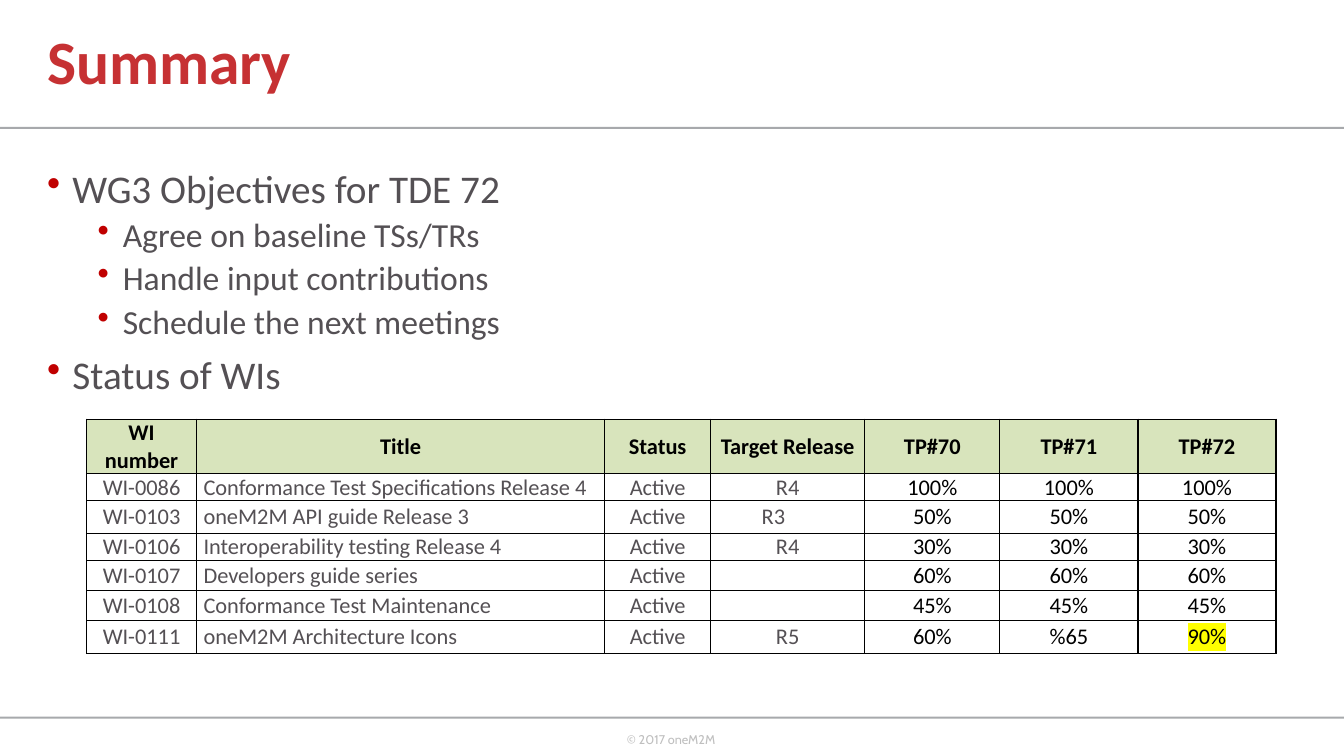
from pptx import Presentation, util as u
from pptx.dml.color import RGBColor
from pptx.enum import shapes, text
from pptx.oxml import parse_xml
from pptx.oxml.ns import nsdecls, qn

RED = RGBColor(0xC6, 0x31, 0x33)
BULLET_RED = RGBColor(0xC0, 0x00, 0x00)
GREY = RGBColor(0x54, 0x50, 0x54)
RULE_GREY = RGBColor(0xA7, 0xA9, 0xAC)
FOOTER_GREY = RGBColor(0xBF, 0xBF, 0xBF)
BLACK = RGBColor(0x00, 0x00, 0x00)
WHITE = RGBColor(0xFF, 0xFF, 0xFF)
HEADER_GREEN = RGBColor(0xD8, 0xE4, 0xBC)
YELLOW = RGBColor(0xFF, 0xFF, 0x00)

# The page is a grid of 160 columns by 90 rows of square units
UNIT = u.Inches(1) // 12
PAGE_COLUMNS, PAGE_ROWS = 160, 90

OBJECTIVES = [
    (0, "WG3 Objectives for TDE 72"),
    (1, "Agree on baseline TSs/TRs"),
    (1, "Handle input contributions"),
    (1, "Schedule the next meetings"),
    (0, "Status of WIs"),
]
# Per level: text size, left indent in grid units, space before
LEVELS = [(28, 3, 10), (24, 9, 5)]

HEADINGS = ["WI number", "Title", "Status", "Target Release", "TP#70", "TP#71", "TP#72"]
WORK_ITEMS = [
    ["WI-0086", "Conformance Test Specifications Release 4", "Active", "R4", "100%", "100%", "100%"],
    ["WI-0103", "oneM2M API guide Release 3", "Active", "R3", "50%", "50%", "50%"],
    ["WI-0106", "Interoperability testing Release 4", "Active", "R4", "30%", "30%", "30%"],
    ["WI-0107", "Developers guide series", "Active", "", "60%", "60%", "60%"],
    ["WI-0108", "Conformance Test Maintenance", "Active", "", "45%", "45%", "45%"],
    ["WI-0111", "oneM2M Architecture Icons", "Active", "R5", "60%", "%65", "90%"],
]
COLUMN_UNITS = [13.08, 48.6, 12.6, 18.36, 16.08, 16.44, 16.44]
ROW_UNITS = [6.48, 3.24, 3.84, 3.24, 3.24, 3.24, 3.84]
TITLE_COLUMN, RELEASE_COLUMN, FIRST_PROGRESS_COLUMN = 1, 3, 4
SHIFTED_RELEASE = (2, RELEASE_COLUMN)
HIGHLIGHTED = (6, 6)


def grid(*units):
    return [round(n * UNIT) for n in units]


def apply(target, values):
    for name, value in values.items():
        setattr(target, name, value)


def add_span(para, words, color, **values):
    span = para.add_run()
    span.text = words
    apply(span.font, {"name": "Calibri", **values})
    span.font.color.rgb = color
    return span


def add_text_box(page, box, **values):
    frame = page.shapes.add_textbox(*grid(*box)).text_frame
    apply(frame, {"word_wrap": True, **values})
    return frame


def add_rule(page, box):
    rule = page.shapes.add_shape(shapes.MSO_SHAPE.RECTANGLE, *grid(*box))
    rule.shadow.inherit = False
    rule.fill.solid()
    rule.fill.fore_color.rgb = RULE_GREY
    rule.line.fill.background()


def add_title(page, box):
    frame = add_text_box(page, box, vertical_anchor=text.MSO_ANCHOR.MIDDLE)
    para = frame.paragraphs[0]
    para.line_spacing = 0.9
    add_span(para, "Summary", RED, size=u.Pt(44), bold=True)


def add_footer(page, box):
    frame = add_text_box(page, box, word_wrap=False)
    add_span(frame.paragraphs[0], "© 2017 oneM2M", FOOTER_GREY, name="Cabin", size=u.Pt(9))


def add_objectives(page, box):
    frame = add_text_box(page, box)
    for index, (level, words) in enumerate(OBJECTIVES):
        para = frame.add_paragraph() if index else frame.paragraphs[0]
        size, indent, space = LEVELS[level]
        # Hanging bullet
        props = para._p.get_or_add_pPr()
        props.set("marL", str(indent * UNIT))
        props.set("indent", str(-3 * UNIT))
        props.append(parse_xml(
            f'<a:buClr {nsdecls("a")}><a:srgbClr val="{BULLET_RED}"/></a:buClr>'))
        props.append(parse_xml(f'<a:buChar {nsdecls("a")} char="•"/>'))
        apply(para, {"level": level, "line_spacing": 0.9,
                     "space_before": u.Pt(space if index else 0)})
        add_span(para, words, GREY, size=u.Pt(size))


def add_borders(cell):
    props = cell._tc.get_or_add_tcPr()
    for side in "LRTB":
        props.append(parse_xml(
            f'<a:ln{side} {nsdecls("a")} w="{u.Pt(1)}"><a:solidFill>'
            f'<a:srgbClr val="{BLACK}"/></a:solidFill></a:ln{side}>'))


def highlight(span):
    span._r.rPr.find(qn("a:solidFill")).addnext(parse_xml(
        f'<a:highlight {nsdecls("a")}><a:srgbClr val="{YELLOW}"/></a:highlight>'))


def fill_cell(cell, row, column, words):
    header = row == 0
    add_borders(cell)
    cell.fill.solid()
    cell.fill.fore_color.rgb = HEADER_GREEN if header else WHITE
    side, shift = grid(0.84, 3.4)
    apply(cell, {
        "vertical_anchor": text.MSO_ANCHOR.MIDDLE,
        "margin_left": side,
        "margin_right": side + shift if (row, column) == SHIFTED_RELEASE else side,
        "margin_top": 0,
        "margin_bottom": 0,
    })
    para = cell.text_frame.paragraphs[0]
    left = column == TITLE_COLUMN and not header
    para.alignment = text.PP_ALIGN.LEFT if left else text.PP_ALIGN.CENTER
    color = BLACK if header or column >= FIRST_PROGRESS_COLUMN else GREY
    span = add_span(para, words, color, size=u.Pt(16), bold=header)
    if (row, column) == HIGHLIGHTED:
        highlight(span)


def add_status_table(page, left, top):
    box = grid(left, top, sum(COLUMN_UNITS), sum(ROW_UNITS))
    table = page.shapes.add_table(len(ROW_UNITS), len(COLUMN_UNITS), *box).table
    apply(table, {"first_row": False, "horz_banding": False})
    for column, width in zip(table.columns, grid(*COLUMN_UNITS)):
        column.width = width
    for row, height in zip(table.rows, grid(*ROW_UNITS)):
        row.height = height
    for row, entries in enumerate([HEADINGS, *WORK_ITEMS]):
        for column, words in enumerate(entries):
            fill_cell(table.cell(row, column), row, column, words)


def add_summary_page(deck):
    page = deck.slides.add_slide(deck.slide_layouts[6])
    # Frame of the page
    for top in (15.12, 85.32):
        add_rule(page, (0, top, PAGE_COLUMNS, 0.24))
    add_footer(page, (73.44, 86.52, 13.2, 4.8))
    # Content
    add_title(page, (4.44, 0, 135.36, 15.36))
    add_objectives(page, (4.44, 19.56, 138, 30.96))
    add_status_table(page, 10.32, 49.92)


def main():
    deck = Presentation()
    deck.slide_width, deck.slide_height = grid(PAGE_COLUMNS, PAGE_ROWS)
    add_summary_page(deck)
    deck.save("out.pptx")


if __name__ == "__main__":
    main()
